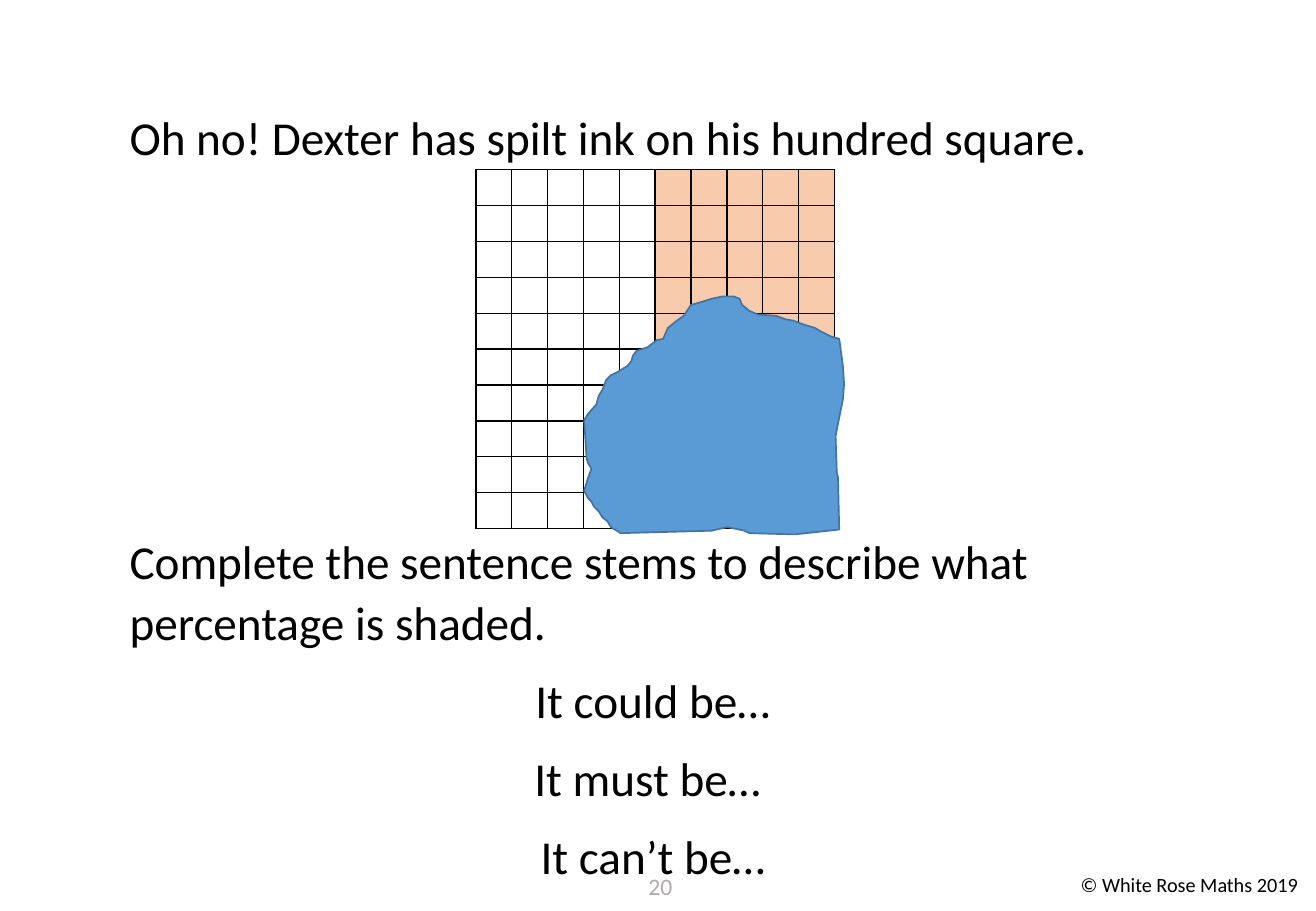
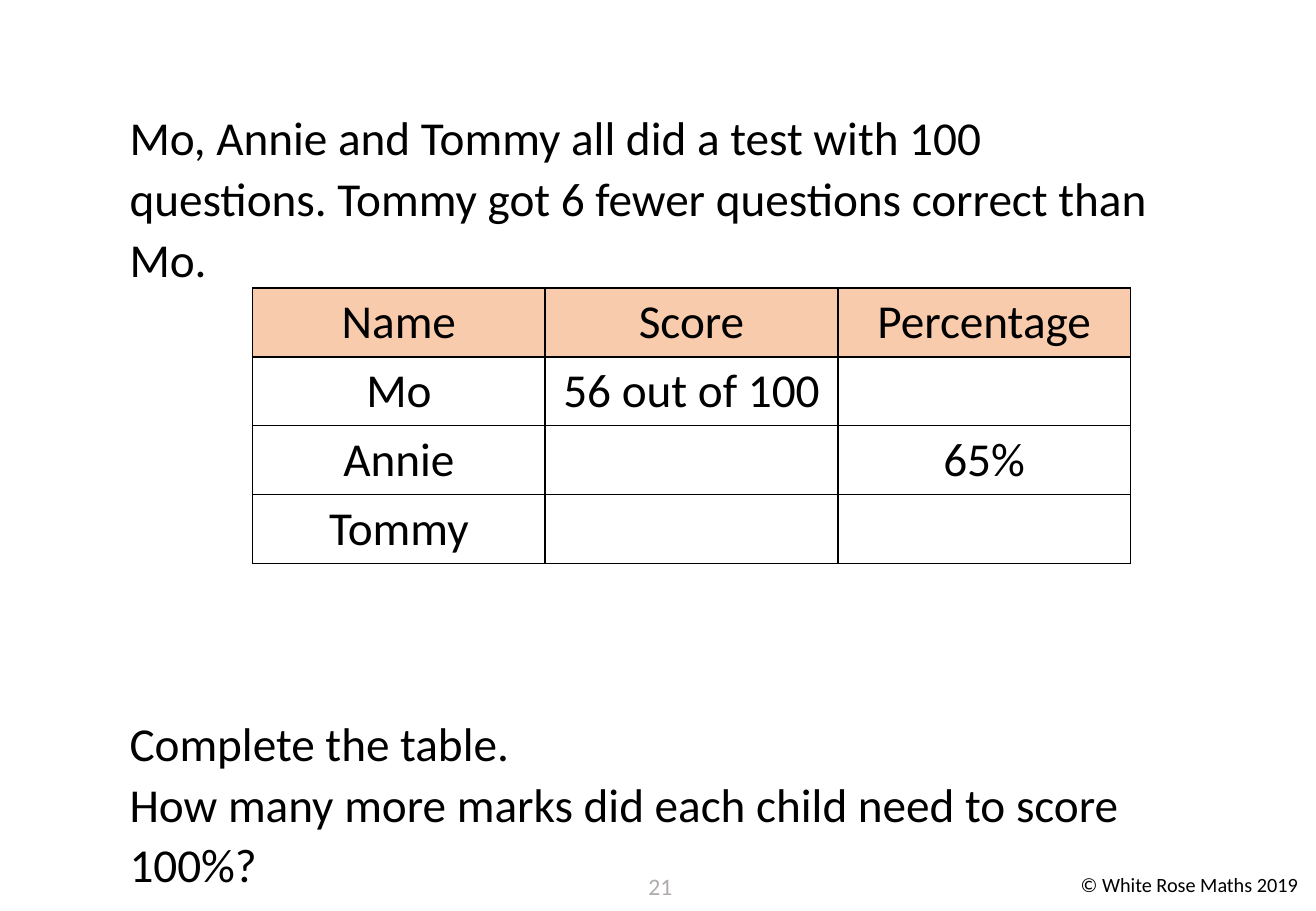
import dataclasses

import lxml.etree
import pptx
import pptx.dml.color
import pptx.enum.text
import pptx.oxml.ns
import pptx.util

Cm = pptx.util.Cm
Pt = pptx.util.Pt
RGB = pptx.dml.color.RGBColor
ALIGN = pptx.enum.text.PP_ALIGN
qn = pptx.oxml.ns.qn


@dataclasses.dataclass(frozen=True)
class Theme:
    font: str = "Calibri"
    black: str = "000000"
    grey: str = "AFABAB"
    peach: str = "F8CBAD"
    ink: str = "5B9BD5"
    edge: str = "43739E"
    body: float = 28
    page: float = 14
    foot: float = 12
    tiny: float = 8
    line: float = 1
    pitch: float = 1.07
    gap: float = 10.3


THEME = Theme()
LEFT, WIDE = 2.46, 22.38

# Outline of the ink blot, in hundredths of an inch on the slide
BLOT = [
    (691, 436), (690, 393), (689, 389), (688, 359), (691, 344),
    (693.5, 329), (694.8, 316), (694.4, 301), (691, 279), (684, 277),
    (676, 273), (671, 270), (661, 267), (653, 264), (647, 263), (639, 260),
    (624, 259), (617, 256), (611, 251), (609, 246), (604, 244), (595, 244),
    (586, 246), (573, 250), (569, 251), (563, 260), (556, 265), (550, 270),
    (546, 279), (541, 280), (533, 286), (524, 289), (521, 293), (520, 297),
    (517, 301), (509, 306), (503, 309), (499, 313), (496, 321), (493, 326),
    (491, 333), (484, 341), (481, 346), (483, 377), (484, 381), (487, 386),
    (484, 394), (481, 404), (484, 410), (487, 413), (489, 417), (493, 421),
    (496, 426), (500, 429), (503, 434), (511, 439), (586, 437), (590, 436),
    (599, 434), (613, 437), (617, 439), (654, 440), (673, 438),
]


def style(para, size, color=THEME.black, align=ALIGN.LEFT):
    para.alignment = align
    para.font.name = THEME.font
    para.font.size = Pt(size)
    para.font.color.rgb = RGB.from_string(color)


def add_text(slide, box, lines, size=THEME.body, color=THEME.black,
             pitch=None, wrap=True):
    """Lines are (text, alignment, space before in points)."""
    frame = slide.shapes.add_textbox(*map(Cm, box)).text_frame
    frame.word_wrap = wrap
    for i, (text, align, gap) in enumerate(lines):
        para = frame.paragraphs[0] if i == 0 else frame.add_paragraph()
        para.text = text
        style(para, size, color, align)
        if pitch:
            para.line_spacing = pitch
        if gap:
            para.space_before = Pt(gap)


def add_body(slide, top, high, lines):
    add_text(slide, (LEFT, top, WIDE, high), lines, pitch=THEME.pitch)


def add_foot(slide, page):
    add_text(slide, (22.35, 18.11, 5.1, 0.76),
             [("© White Rose Maths 2019", ALIGN.LEFT, 0)],
             THEME.foot, wrap=False)
    add_text(slide, (13.16, 18.11, 1.3, 1), [(str(page), ALIGN.CENTER, 0)],
             THEME.page, THEME.grey)


def add_lines(cell):
    props = cell._tc.get_or_add_tcPr()
    for side in ("a:lnL", "a:lnR", "a:lnT", "a:lnB"):
        line = lxml.etree.SubElement(props, qn(side), w=str(Pt(THEME.line)))
        fill = lxml.etree.SubElement(line, qn("a:solidFill"))
        lxml.etree.SubElement(fill, qn("a:srgbClr"), val=THEME.black)


def add_grid(slide, left, top, wide, high, rows, shaded, size):
    """Draw a ruled table; shaded(row, col) tells which cells are filled."""
    count = len(rows[0])
    table = slide.shapes.add_table(len(rows), count, Cm(left), Cm(top),
                                   Cm(wide * count),
                                   Cm(high * len(rows))).table
    table.first_row = table.horz_banding = False
    for col in table.columns:
        col.width = Cm(wide)
    for r, texts in enumerate(rows):
        table.rows[r].height = Cm(high)
        for c, text in enumerate(texts):
            cell = table.cell(r, c)
            add_lines(cell)
            if shaded(r, c):
                cell.fill.solid()
                cell.fill.fore_color.rgb = RGB.from_string(THEME.peach)
            else:
                cell.fill.background()
            cell.vertical_anchor = pptx.enum.text.MSO_ANCHOR.MIDDLE
            para = cell.text_frame.paragraphs[0]
            if text:
                para.text = text
                style(para, size, align=ALIGN.CENTER)
            else:
                # An empty cell takes its height from the end mark
                end = para._p.get_or_add_endParaRPr()
                end.set("sz", str(int(THEME.tiny * 100)))


def add_blot(slide, points):
    path = slide.shapes.build_freeform(*points[0], scale=Cm(2.54) / 100)
    path.add_line_segments(points[1:], close=True)
    blot = path.convert_to_shape()
    blot.shadow.inherit = False
    blot.fill.solid()
    blot.fill.fore_color.rgb = RGB.from_string(THEME.ink)
    blot.line.color.rgb = RGB.from_string(THEME.edge)
    blot.line.width = Pt(THEME.line)


def add_page(deck, page):
    slide = deck.slides.add_slide(deck.slide_layouts[6])
    add_foot(slide, page)
    return slide


def draw_square(deck):
    slide = add_page(deck, 20)
    add_body(slide, 2.06, 1.5, [
        ("Oh no! Dexter has spilt ink on his hundred square.", ALIGN.LEFT, 0),
    ])
    add_body(slide, 10.92, 8, [
        ("Complete the sentence stems to describe what percentage is shaded.",
         ALIGN.LEFT, 0),
        ("It could be…", ALIGN.CENTER, THEME.gap),
        ("It must be… ", ALIGN.CENTER, THEME.gap),
        ("It can’t be…", ALIGN.CENTER, THEME.gap),
    ])
    add_grid(slide, 9.95, 3.55, 0.75, 0.75, [[""] * 10] * 10,
             lambda row, col: col >= 5, THEME.tiny)
    add_blot(slide, BLOT)


def draw_scores(deck):
    slide = add_page(deck, 21)
    add_body(slide, 2.06, 4, [
        ("Mo, Annie and Tommy all did a test with 100 questions. "
         "Tommy got 6 fewer questions correct than Mo.", ALIGN.LEFT, 0),
    ])
    add_body(slide, 14.73, 4, [
        ("Complete the table.", ALIGN.LEFT, 0),
        ("How many more marks did each child need to score 100%?",
         ALIGN.LEFT, 0),
    ])
    add_grid(slide, 5.28, 6.02, 6.12, 1.44, [
        ["Name", "Score", "Percentage"],
        ["Mo", "56 out of 100", ""],
        ["Annie", "", "65%"],
        ["Tommy", "", ""],
    ], lambda row, col: row == 0, THEME.body)


def main():
    deck = pptx.Presentation()
    deck.slide_width, deck.slide_height = Cm(27.52), Cm(19.05)
    draw_square(deck)
    draw_scores(deck)
    deck.save("out.pptx")


if __name__ == "__main__":
    main()
